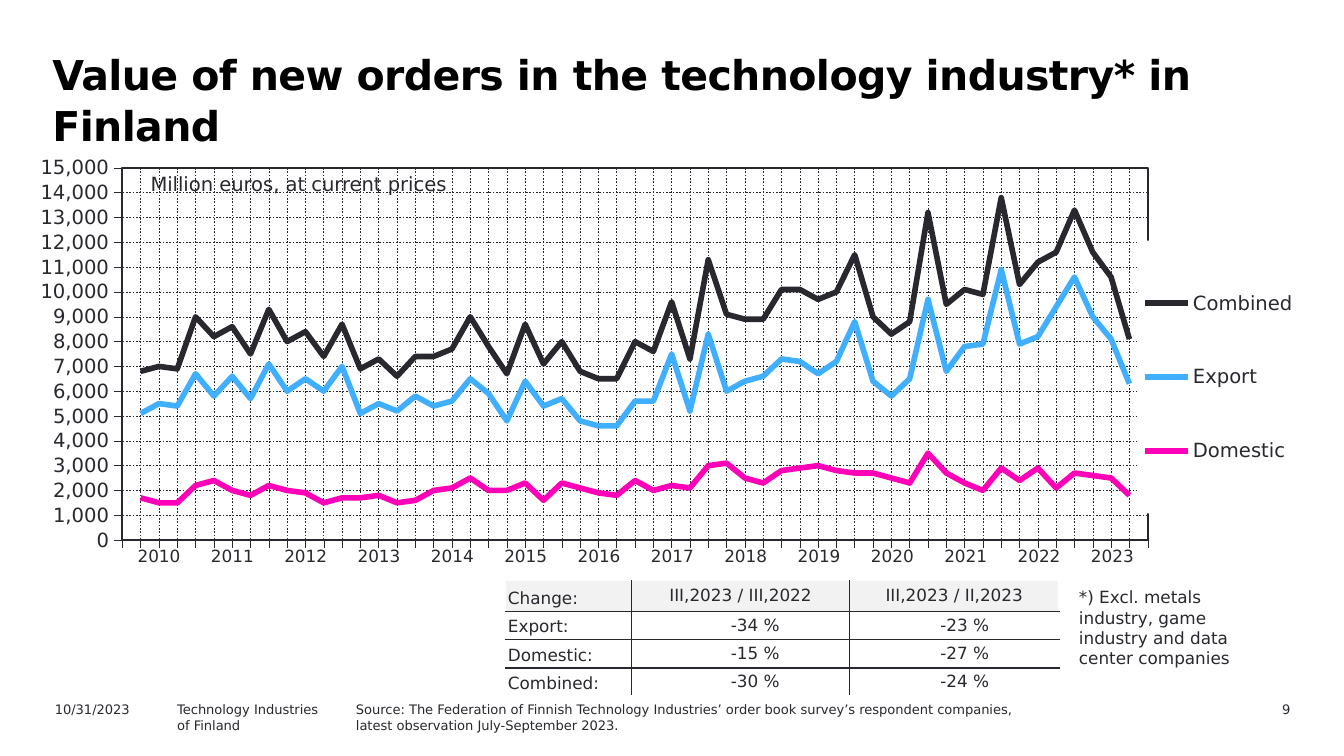
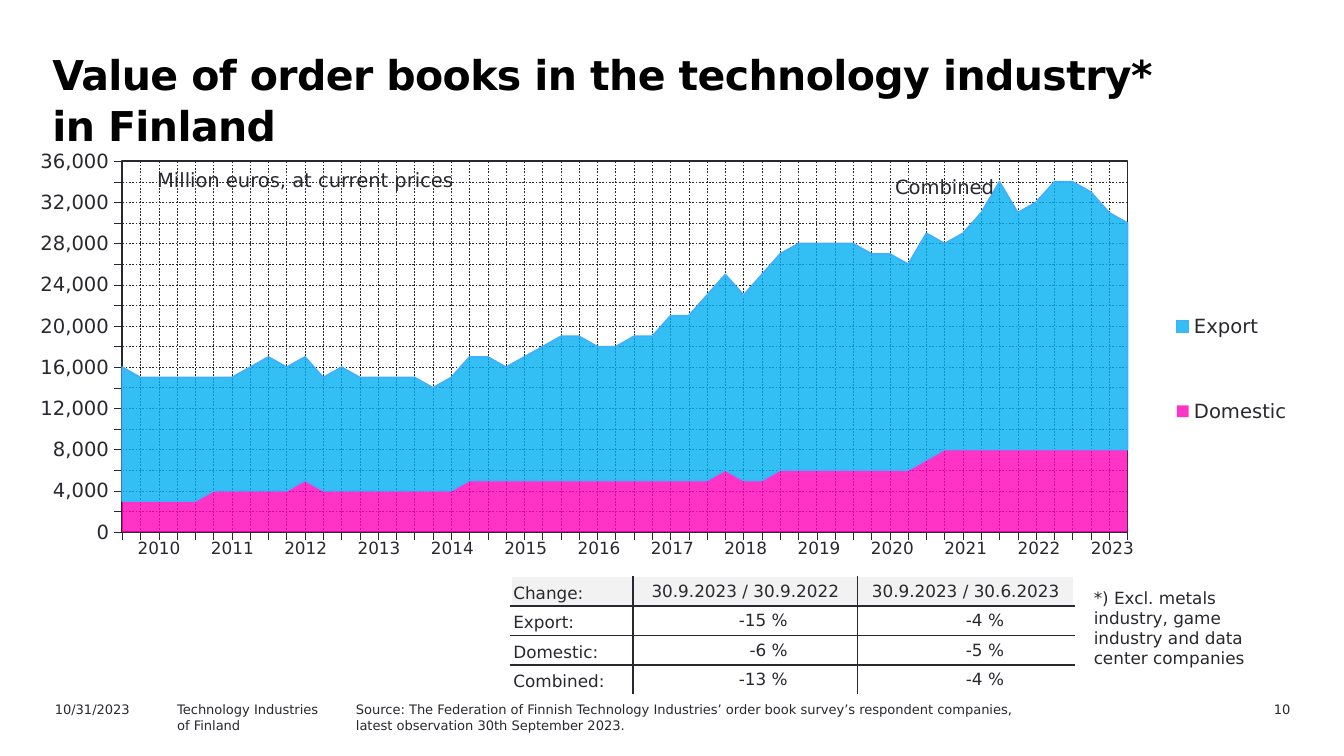
from pptx import Presentation
from pptx.chart.data import CategoryChartData
from pptx.dml.color import RGBColor
from pptx.enum.chart import XL_CHART_TYPE, XL_LEGEND_POSITION, XL_TICK_LABEL_POSITION, XL_TICK_MARK
from pptx.enum.dml import MSO_LINE
from pptx.enum.text import MSO_ANCHOR, MSO_AUTO_SIZE, PP_ALIGN
from pptx.oxml import parse_xml
from pptx.oxml.ns import nsdecls, qn
from pptx.util import Inches, Pt

COLORS = {
    "black": "000000",
    "ink": "29282E",
    "white": "FFFFFF",
    "pale": "F2F2F2",
    "sky": "40AFFF",
    "blue": "00B0F0",
    "pink": "FF00B8",
}
FONT = "DejaVu Sans"
NO_TABLE_STYLE = "{2D5ABB26-0587-4C30-8999-92F81FD0307C}"
YEARS = [str(year) for year in range(2010, 2024)]
QUARTERS = [str(number) for number in range(1, 55)]
UNIT = "Million euros, at current prices"
EXCLUSION = "*) Excl. metals industry, game industry and data center companies"
SOURCE = ("Source: The Federation of Finnish Technology Industries’ order book survey’s "
          "respondent companies, latest observation ")

# New orders in hundreds of millions, order books in thousands of millions
NEW_ORDERS = {
    "Combined": [
        68, 70, 69, 90, 82, 86, 75, 93, 80, 84, 74, 87, 69, 73, 66, 74, 74, 77, 90,
        78, 67, 87, 71, 80, 68, 65, 65, 80, 76, 96, 73, 113, 91, 89, 89, 101, 101, 97,
        100, 115, 90, 83, 88, 132, 95, 101, 99, 138, 103, 112, 116, 133, 116, 106, 81],
    "Export": [
        51, 55, 54, 67, 58, 66, 57, 71, 60, 65, 60, 70, 51, 55, 52, 58, 54, 56, 65,
        59, 48, 64, 54, 57, 48, 46, 46, 56, 56, 75, 52, 83, 60, 64, 66, 73, 72, 67,
        72, 88, 64, 58, 65, 97, 68, 78, 79, 109, 79, 82, 94, 106, 90, 81, 63],
    "Domestic": [
        17, 15, 15, 22, 24, 20, 18, 22, 20, 19, 15, 17, 17, 18, 15, 16, 20, 21, 25,
        20, 20, 23, 16, 23, 21, 19, 18, 24, 20, 22, 21, 30, 31, 25, 23, 28, 29, 30,
        28, 27, 27, 25, 23, 35, 27, 23, 20, 29, 24, 29, 21, 27, 26, 25, 18],
}
ORDER_BOOKS = {
    "Domestic": [
        3, 3, 3, 3, 3, 4, 4, 4, 4, 4, 5, 4, 4, 4, 4, 4, 4, 4, 4, 5, 5, 5, 5, 5, 5, 5, 5, 5,
        5, 5, 5, 5, 5, 6, 5, 5, 6, 6, 6, 6, 6, 6, 6, 6, 7, 8, 8, 8, 8, 8, 8, 8, 8, 8, 8, 8],
    "Export": [
        13, 12, 12, 12, 12, 11, 11, 12, 13, 12, 12, 11, 12, 11, 11, 11, 11, 10, 11,
        12, 12, 11, 12, 13, 14, 14, 13, 13, 14, 14, 16, 16, 18, 19, 18, 20, 21, 22,
        22, 22, 22, 21, 21, 20, 22, 20, 21, 23, 26, 23, 24, 26, 26, 25, 23, 22],
}


def rgb(name):
    return RGBColor.from_string(COLORS[name])


def style_font(font, size, color="ink", bold=False):
    font.name = FONT
    font.size = Pt(size)
    font.bold = bold
    font.color.rgb = rgb(color)


def set_insets(target, left, top, right, bottom):
    target.margin_left, target.margin_top = Inches(left), Inches(top)
    target.margin_right, target.margin_bottom = Inches(right), Inches(bottom)


def add_title(page, text):
    title = page.shapes.title
    title.left, title.top = Inches(0.28), Inches(0.31)
    title.width, title.height = Inches(8.76), Inches(0.71)
    frame = title.text_frame
    frame.text = text
    frame.word_wrap = True
    frame.auto_size = MSO_AUTO_SIZE.NONE
    frame.vertical_anchor = MSO_ANCHOR.TOP
    set_insets(frame, 0.11, 0.05, 0.1, 0.05)
    para = frame.paragraphs[0]
    para.alignment = PP_ALIGN.LEFT
    para.line_spacing = Pt(27)
    para.space_before = Pt(0)
    style_font(para.font, 22, "black", bold=True)
    para.runs[0].font._element.set("spc", "-30")


def add_text(page, place, text, size, align=PP_ALIGN.LEFT, wrap=True, insets=(0.1, 0.05)):
    box = page.shapes.add_textbox(*map(Inches, place))
    frame = box.text_frame
    frame.word_wrap = wrap
    frame.text = text
    set_insets(frame, *insets, *insets)
    for para in frame.paragraphs:
        para.alignment = align
        style_font(para.font, size)


def add_footer(page, number, observation):
    top = 5.17
    add_text(page, (8.76, top, 0.94, 0.18), str(number), 7, PP_ALIGN.RIGHT)
    add_text(page, (2.55, top, 5.28, 0.32), SOURCE + observation, 7)
    add_text(page, (1.22, top, 1.8, 0.18), "Technology Industries\nof Finland", 7)
    add_text(page, (0.31, top, 1, 0.18), "10/31/2023", 7)


# Charts

def manual_layout(place, chart_size, inner=False):
    """Lay out a part of a chart, given in inches from the chart's corner."""
    target = '<c:layoutTarget val="inner"/>' if inner else ""
    modes = "".join(f'<c:{axis}Mode val="edge"/>' for axis in "xy")
    sizes = "".join(f'<c:{key} val="{length / whole:.4f}"/>'
                    for key, length, whole in zip("xywh", place, chart_size * 2))
    return parse_xml(f'<c:layout {nsdecls("c")}><c:manualLayout>{target}{modes}{sizes}'
                     "</c:manualLayout></c:layout>")


def style_axis(axis):
    axis.major_tick_mark = XL_TICK_MARK.OUTSIDE
    axis.minor_tick_mark = XL_TICK_MARK.NONE
    axis.has_major_gridlines = True
    grid = axis.major_gridlines.format.line
    for line, width in ((axis.format.line, 0.22), (grid, 0.25)):
        line.color.rgb = rgb("ink")
        line.width = Pt(width)
    grid.dash_style = MSO_LINE.DASH


def place_plot(chart, layout):
    area = chart.element.find(".//" + qn("c:plotArea"))
    for old_layout in area.findall(qn("c:layout")):
        area.remove(old_layout)
    area.insert(0, layout)
    area.append(parse_xml(
        f'<c:spPr {nsdecls("c", "a")}><a:noFill/><a:ln w="{Pt(1)}"><a:solidFill>'
        f'<a:srgbClr val="{COLORS["ink"]}"/></a:solidFill></a:ln></c:spPr>'))
    # Start the first quarter on the value axis
    value_axis = area.find(qn("c:valAx"))
    for crossing in value_axis.findall(qn("c:crossBetween")):
        value_axis.remove(crossing)
    anchor = value_axis.find(qn("c:crosses"))
    if anchor is None:
        anchor = value_axis.find(qn("c:crossAx"))
    anchor.addnext(parse_xml(f'<c:crossBetween {nsdecls("c")} val="midCat"/>'))


def place_legend(chart, layout, filled):
    chart.has_legend = True
    legend = chart.legend
    legend.position = XL_LEGEND_POSITION.RIGHT
    legend.include_in_layout = False
    style_font(legend.font, 10.5)
    element = legend._element
    for old_layout in element.findall(qn("c:layout")):
        element.remove(old_layout)
    element.find(qn("c:legendPos")).addnext(layout)
    if filled:
        element.find(qn("c:overlay")).addnext(parse_xml(
            f'<c:spPr {nsdecls("c", "a")}><a:solidFill><a:srgbClr val="{COLORS["white"]}"/>'
            "</a:solidFill></c:spPr>"))


def add_quarter_chart(page, kind, place, series, top_value, step, plot_place, legend_place):
    data = CategoryChartData(number_format="#,##0")
    data.categories = QUARTERS
    for name, values in series.items():
        data.add_series(name, values)
    chart = page.shapes.add_chart(kind, *map(Inches, place), data).chart
    chart.has_title = False
    style_font(chart.font, 10.5)
    style_axis(chart.category_axis)
    chart.category_axis.tick_label_position = XL_TICK_LABEL_POSITION.NONE
    axis = chart.value_axis
    style_axis(axis)
    axis.minimum_scale, axis.maximum_scale, axis.major_unit = 0, top_value, step
    axis.tick_labels.number_format = "#,##0"
    axis.tick_labels.number_format_is_linked = False
    style_font(axis.tick_labels.font, 10.5)
    chart.plots[0].vary_by_categories = False
    chart_size = place[2:]
    place_plot(chart, manual_layout(plot_place, chart_size, inner=True))
    place_legend(chart, manual_layout(legend_place, chart_size),
                 filled=kind == XL_CHART_TYPE.LINE)
    return chart


def color_lines(chart, colors):
    for line, color in zip(chart.plots[0].series, colors):
        line.smooth = False
        line.format.line.color.rgb = rgb(color)
        line.format.line.width = Pt(3)


def color_areas(chart, colors):
    for area, color in zip(chart.plots[0].series, colors):
        area.format.fill.solid()
        area.format.fill.fore_color.rgb = rgb(color)
        shade = area._element.find(".//" + qn("a:srgbClr"))
        shade.append(parse_xml(f'<a:alpha {nsdecls("a")} val="80000"/>'))
    # Outline of the upper area
    area.format.line.color.rgb = rgb("sky")
    area.format.line.width = Pt(0.88)


# Tables

def add_plain_table(page, left, top, widths, heights):
    frame = page.shapes.add_table(len(heights), len(widths), Inches(left), Inches(top),
                                  Inches(sum(widths)), Inches(sum(heights)))
    table = frame.table
    table.first_row = table.horz_banding = False
    table._tbl.tblPr.find(qn("a:tableStyleId")).text = NO_TABLE_STYLE
    for column, width in zip(table.columns, widths):
        column.width = Inches(width)
    for row, height in zip(table.rows, heights):
        row.height = Inches(height)
    return table


def fill_cell(cell, text, align, fill=None):
    cell.text = text
    para = cell.text_frame.paragraphs[0]
    para.alignment = align
    style_font(para.font, 9)
    if fill:
        cell.fill.solid()
        cell.fill.fore_color.rgb = rgb(fill)
    else:
        cell.fill.background()


def add_borders(cell, outer_edges):
    """White on the outside of the table, dark between cells."""
    for index, (side, outer) in enumerate(zip("LRTB", outer_edges)):
        color = COLORS["white" if outer else "ink"]
        cell._tc.get_or_add_tcPr().insert(index, parse_xml(
            f'<a:ln{side} {nsdecls("a")} w="{Pt(1)}"><a:solidFill><a:srgbClr val="{color}"/>'
            f"</a:solidFill></a:ln{side}>"))


def add_year_row(page, top):
    table = add_plain_table(page, 0.91, top, [7.64 / len(YEARS)] * len(YEARS), [0.31])
    for cell, year in zip(table.rows[0].cells, YEARS):
        fill_cell(cell, year, PP_ALIGN.CENTER)


def add_change_table(page, left, top, widths, heights, rows):
    table = add_plain_table(page, left, top, widths, heights)
    last_row, last_column = len(heights) - 1, len(widths) - 1
    fills = {0: "pale", last_row: "white"}
    for r, texts in enumerate(rows):
        for c, text in enumerate(texts):
            cell = table.cell(r, c)
            is_value = r > 0 and c > 0
            align = PP_ALIGN.LEFT if c == 0 else PP_ALIGN.RIGHT if is_value else PP_ALIGN.CENTER
            fill_cell(cell, text, align, fills.get(r))
            cell.vertical_anchor = MSO_ANCHOR.MIDDLE if c else MSO_ANCHOR.BOTTOM
            set_insets(cell, 0.02, 0.02, 0.52 if is_value else 0.02, 0.02)
            add_borders(cell, (c == 0, c == last_column, r == 0, r == last_row))


# Slides

def build_new_orders(page):
    add_title(page, "Value of new orders in the technology industry* in Finland")
    # An empty quarter stands at each end
    series = {name: [None, *(value * 100 for value in values), None]
              for name, values in NEW_ORDERS.items()}
    chart = add_quarter_chart(page, XL_CHART_TYPE.LINE, (0.12, 1.11, 9.58, 3.33), series,
                              15000, 1000, (0.79, 0.14, 7.63, 2.77), (8.34, 0.68, 1.22, 2.03))
    color_lines(chart, ["ink", "sky", "pink"])
    add_text(page, (1.03, 1.23, 2.59, 0.27), UNIT, 10.5, wrap=False, insets=(0.09, 0.05))
    add_change_table(page, 3.76, 4.32, [0.94, 1.62, 1.56], [0.23, 0.21, 0.21, 0.21], [
        ("Change:", "III,2023 / III,2022", "III,2023 / II,2023"),
        ("Export:", "-34 %", "-23 %"),
        ("Domestic:", "-15 %", "-27 %"),
        ("Combined:", "-30 %", "-24 %")])
    add_text(page, (7.93, 4.32, 1.66, 0.86), EXCLUSION, 9)
    add_footer(page, 9, "July-September 2023.")
    add_year_row(page, 4.02)


def build_order_books(page):
    add_title(page, "Value of order books in the technology industry* in Finland")
    series = {name: [value * 1000 for value in values] for name, values in ORDER_BOOKS.items()}
    chart = add_quarter_chart(page, XL_CHART_TYPE.AREA_STACKED, (0.2, 1.11, 9.5, 3.12), series,
                              36000, 2000, (0.71, 0.09, 7.48, 2.76), (8.45, 0.77, 1.03, 1.73))
    color_areas(chart, ["pink", "blue"])
    add_text(page, (1.08, 1.2, 2.44, 0.27), UNIT, 10.5, wrap=False, insets=(0.09, 0.05))
    add_change_table(page, 3.8, 4.29, [0.91, 1.67, 1.61], [0.22] * 4, [
        ("Change:", "30.9.2023 / 30.9.2022", "30.9.2023 / 30.6.2023"),
        ("Export:", "-15 %", "-4 %"),
        ("Domestic:", "-6 %", "-5 %"),
        ("Combined:", "-13 %", "-4 %")])
    add_text(page, (8.04, 4.32, 1.66, 0.71), EXCLUSION, 9)
    add_text(page, (6.57, 1.26, 1.06, 0.27), "Combined", 10.5, insets=(0.09, 0.04))
    add_footer(page, 10, "30th September 2023.")
    add_year_row(page, 3.96)


def main():
    deck = Presentation()
    deck.slide_width, deck.slide_height = Inches(10), Inches(10 * 9 / 16)
    title_only = deck.slide_layouts[5]
    for build in (build_new_orders, build_order_books):
        build(deck.slides.add_slide(title_only))
    deck.save("out.pptx")


if __name__ == "__main__":
    main()
